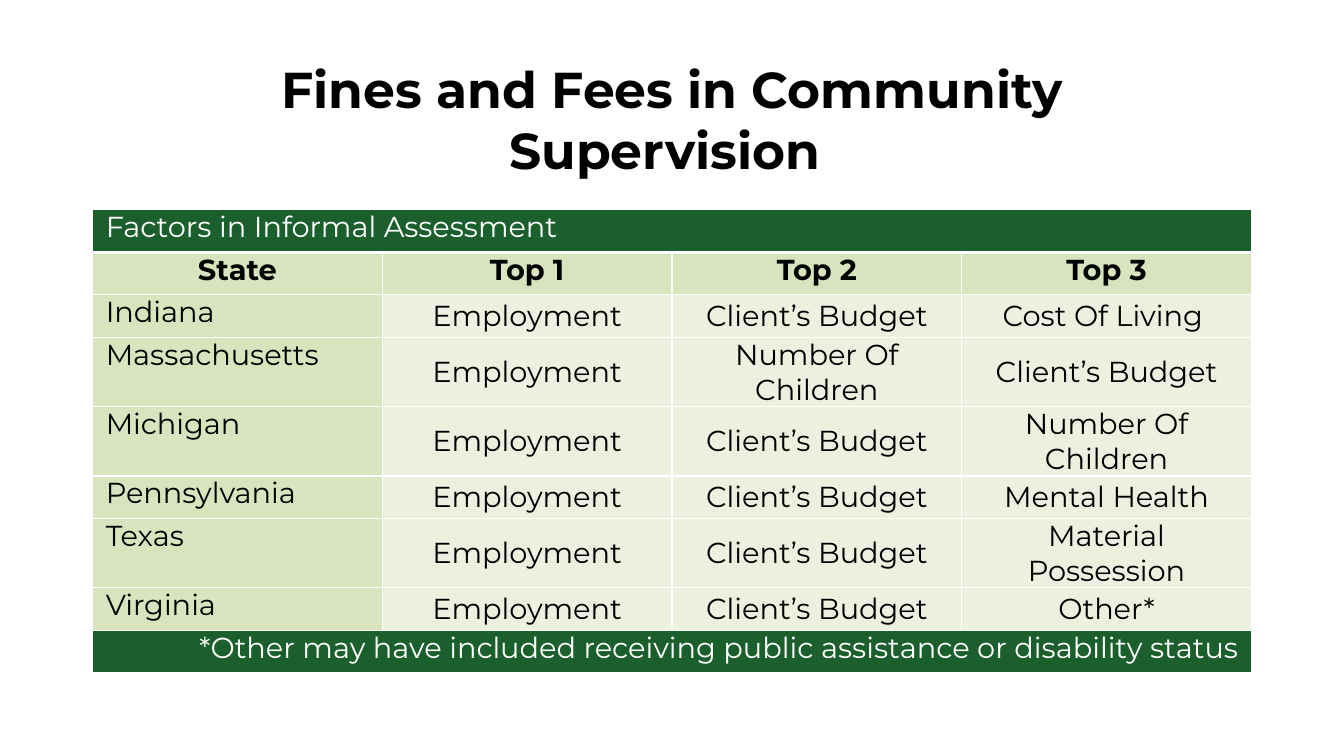
from lxml import etree
from pptx import Presentation
from pptx.dml.color import RGBColor
from pptx.enum.text import MSO_ANCHOR, PP_ALIGN
from pptx.oxml.ns import qn
from pptx.util import Inches, Pt

LEFT, CENTER, RIGHT = PP_ALIGN.LEFT, PP_ALIGN.CENTER, PP_ALIGN.RIGHT
TOP, MIDDLE = MSO_ANCHOR.TOP, MSO_ANCHOR.MIDDLE

FONT = "Montserrat"
BLACK = RGBColor(0x00, 0x00, 0x00)
WHITE = RGBColor(0xFF, 0xFF, 0xFF)
GREEN = RGBColor(0x1B, 0x5F, 0x2D)
LIGHT = RGBColor(0xD7, 0xE4, 0xBD)
PALE = RGBColor(0xEB, 0xF1, 0xDE)

TITLE = "Fines and Fees in Community Supervision "
BANNER = "Factors in Informal Assessment"
HEADS = ["State", "Top 1", "Top 2", "Top 3"]
STATES = [
    ["Indiana", "Employment", "Client’s Budget", "Cost Of Living "],
    ["Massachusetts", "Employment", "Number Of Children", "Client’s Budget"],
    ["Michigan", "Employment", "Client’s Budget", "Number Of Children"],
    ["Pennsylvania", "Employment", "Client’s Budget", "Mental Health"],
    ["Texas", "Employment", "Client’s Budget", "Material Possession"],
    ["Virginia", "Employment", "Client’s Budget", "Other*"],
]
NOTE = "*Other may have included receiving public assistance or disability status"


def put_text(frame, text, size=22, color=BLACK, bold=False, align=LEFT):
    para = frame.paragraphs[0]
    para.alignment = align
    run = para.add_run()
    run.text = text
    run.font.name = FONT
    run.font.size = Pt(size)
    run.font.bold = bold
    run.font.color.rgb = color


def add_title(slide):
    box = slide.shapes.add_textbox(
        Inches(1.18), Inches(0.61), Inches(11.87), Inches(1.3))
    frame = box.text_frame
    frame.word_wrap = True
    frame.vertical_anchor = MIDDLE
    frame.margin_left = frame.margin_right = Inches(0.14)
    put_text(frame, TITLE, size=38.4, bold=True, align=CENTER)


def set_border(cell, base=1):
    """Draw white cell borders; base is the bottom width in points."""
    props = cell._tc.get_or_add_tcPr()
    for side, width in (("L", 1), ("R", 1), ("T", 1), ("B", base)):
        line = etree.SubElement(props, qn(f"a:ln{side}"), w=str(Pt(width)))
        fill = etree.SubElement(line, qn("a:solidFill"))
        etree.SubElement(fill, qn("a:srgbClr"), val=str(WHITE))


def set_cell(cell, text, fill, anchor=TOP, base=1, **style):
    # Borders must come before the fill in the cell properties
    set_border(cell, base)
    cell.fill.solid()
    cell.fill.fore_color.rgb = fill
    cell.margin_left = cell.margin_right = Inches(0.14)
    cell.margin_top = cell.margin_bottom = 0
    cell.vertical_anchor = anchor
    if text:
        put_text(cell.text_frame, text, **style)


def set_band(table, row, text, **style):
    """Fill a green row that spans the whole table."""
    cells = list(table.rows[row].cells)
    cells[0].merge(cells[-1])
    for cell, words in zip(cells, [text] + [""] * (len(cells) - 1)):
        set_cell(cell, words, GREEN, color=WHITE, **style)


def add_grid(slide):
    count = len(STATES) + 3
    table = slide.shapes.add_table(
        count, len(HEADS), Inches(0.98), Inches(2.22),
        Inches(12.27), Inches(0.45 * count)).table

    # Banner and column heads
    set_band(table, 0, BANNER, base=3)
    for col, head in enumerate(HEADS):
        set_cell(table.cell(1, col), head, LIGHT, bold=True, align=CENTER)

    # One row per state
    for row, (state, *tops) in enumerate(STATES, 2):
        set_cell(table.cell(row, 0), state, LIGHT)
        for col, top in enumerate(tops, 1):
            set_cell(table.cell(row, col), top, PALE, MIDDLE, align=CENTER)

    # Footnote
    set_band(table, count - 1, NOTE, align=RIGHT)


def main():
    deck = Presentation()
    deck.slide_width = Inches(14.23)
    deck.slide_height = Inches(8)
    slide = deck.slides.add_slide(deck.slide_layouts[6])
    add_title(slide)
    add_grid(slide)
    deck.save("out.pptx")


if __name__ == "__main__":
    main()
